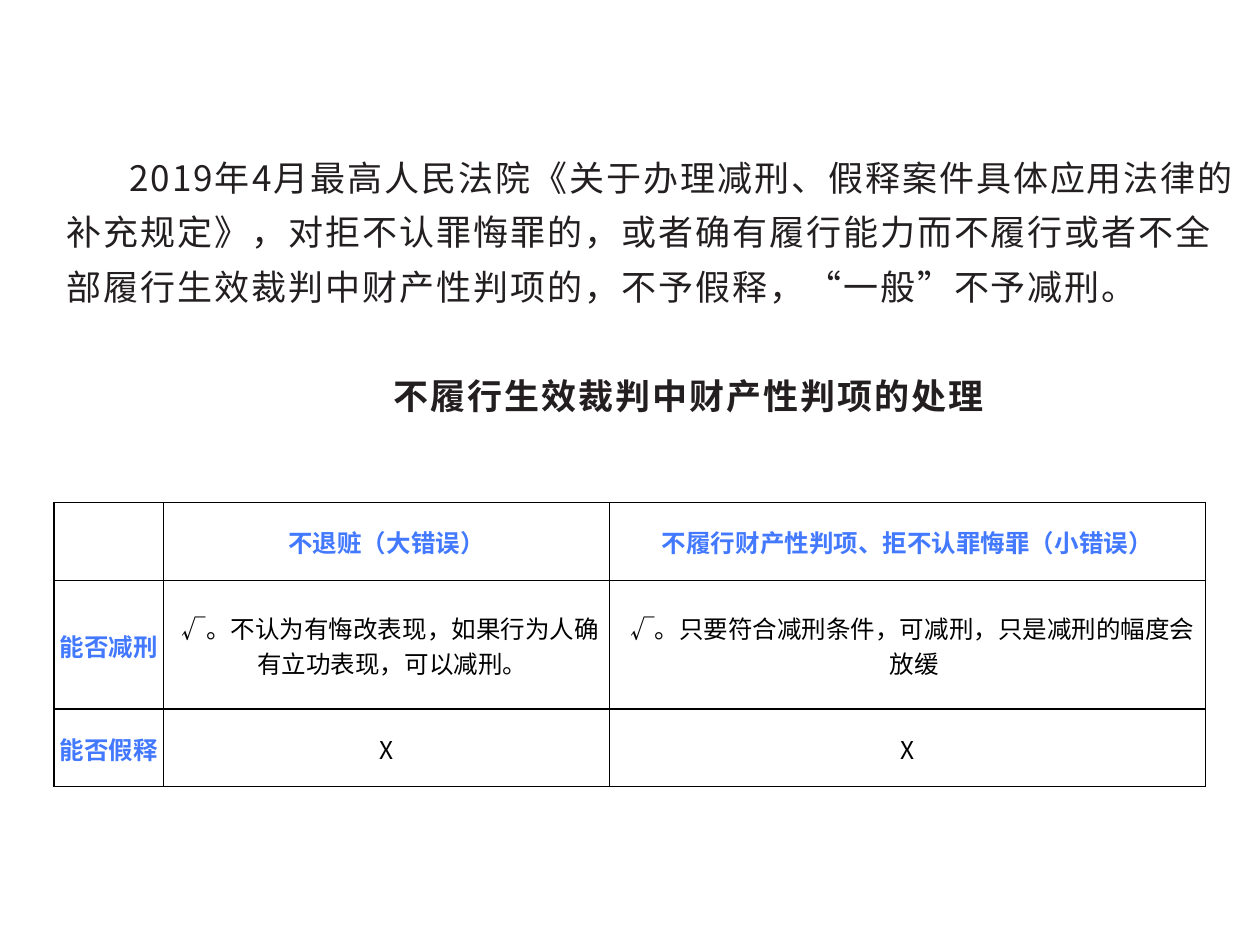
from lxml.etree import SubElement
from pptx import Presentation
from pptx.dml.color import RGBColor
from pptx.enum.text import MSO_ANCHOR as Anchor, PP_ALIGN as Align
from pptx.oxml.ns import qn
from pptx.util import Cm, Pt

COLORS = {"ink": "231F20", "accent": "4379FF", "black": "000000"}
CJK_FONT = "Noto Sans CJK SC"

RULE = ("2019年4月最高人民法院《关于办理减刑、假释案件具体应用法律的补充规定》，"
        "对拒不认罪悔罪的，或者确有履行能力而不履行或者不全部履行生效裁判中财产性判项的，"
        "不予假释，“一般”不予减刑。")
HEADING = "不履行生效裁判中财产性判项的处理"
ROWS = [
    ["", "不退赃（大错误）", "不履行财产性判项、拒不认罪悔罪（小错误）"],
    ["能否减刑", "√。不认为有悔改表现，如果行为人确有立功表现，可以减刑。",
     "√。只要符合减刑条件，可减刑，只是减刑的幅度会放缓"],
    ["能否假释", "X", "X"],
]
COLUMN_WIDTHS = [2.21, 8.99, 12.01]
ROW_HEIGHTS = [1.57, 2.59, 1.57]
# Left margins of the two wrapped answers, by column
ANSWER_MARGINS = {1: 0.23, 2: 0.28}


def style_runs(paragraph, size, color, bold=False, latin=CJK_FONT, spacing=0):
    for run in paragraph.runs:
        run.font.size = Pt(size)
        run.font.bold = bold
        run.font.name = latin
        run.font.color.rgb = RGBColor.from_string(COLORS[color])
        properties = run._r.get_or_add_rPr()
        SubElement(properties, qn("a:ea")).set("typeface", CJK_FONT)
        if spacing:
            properties.set("spc", str(round(spacing * 100)))


def set_indent(paragraph, margin, first_line):
    properties = paragraph._p.get_or_add_pPr()
    properties.set("marL", str(Cm(margin)))
    properties.set("indent", str(Cm(first_line)))


def add_borders(cell):
    properties = cell._tc.get_or_add_tcPr()
    for position, side in enumerate(("lnL", "lnR", "lnT", "lnB")):
        line = properties.makeelement(qn(f"a:{side}"), {"w": str(Pt(1))})
        fill = SubElement(line, qn("a:solidFill"))
        SubElement(fill, qn("a:srgbClr")).set("val", COLORS["black"])
        properties.insert(position, line)


def add_rule_text(slide, left, top, width, height):
    frame = slide.shapes.add_textbox(left, top, width, height).text_frame
    frame.word_wrap = True
    frame.text = f"{RULE}\n{HEADING}"
    rule, heading = frame.paragraphs
    for paragraph in (rule, heading):
        set_indent(paragraph, 0, 1.27)
        paragraph.line_spacing = Pt(31.15)
    style_runs(rule, 20, "ink", spacing=1.1)

    # Heading, one line below the rule
    heading.alignment = Align.CENTER
    heading.space_before = Pt(31.15)
    style_runs(heading, 20, "ink", bold=True, latin="Arial", spacing=1.1)


def add_handling_table(slide, left, top, width, height):
    table = slide.shapes.add_table(len(ROWS), len(COLUMN_WIDTHS),
                                   left, top, width, height).table
    for column, share in zip(table.columns, COLUMN_WIDTHS):
        column.width = int(width * share / sum(COLUMN_WIDTHS))
    for row, share in zip(table.rows, ROW_HEIGHTS):
        row.height = int(height * share / sum(ROW_HEIGHTS))

    for r, texts in enumerate(ROWS):
        for c, text in enumerate(texts):
            cell = table.cell(r, c)
            cell.fill.background()
            add_borders(cell)
            cell.vertical_anchor = Anchor.MIDDLE
            cell.margin_left = cell.margin_right = cell.margin_top = Cm(0.03)
            cell.margin_bottom = 0
            cell.text_frame.text = text
            paragraph = cell.text_frame.paragraphs[0]
            paragraph.alignment = Align.CENTER
            is_label = r == 0 or c == 0
            style_runs(paragraph, 14, "accent" if is_label else "black", bold=is_label)
            if r == 1 and c in ANSWER_MARGINS:
                set_indent(paragraph, ANSWER_MARGINS[c], -0.08)


def main():
    deck = Presentation()
    deck.slide_width, deck.slide_height = Cm(25.4), Cm(19.05)
    slide = deck.slides.add_slide(deck.slide_layouts[6])
    add_rule_text(slide, Cm(1.09), Cm(2.77), Cm(24.31), Cm(15.72))
    add_handling_table(slide, Cm(1.09), Cm(10.13),
                       Cm(sum(COLUMN_WIDTHS)), Cm(sum(ROW_HEIGHTS)))
    deck.save("out.pptx")


if __name__ == "__main__":
    main()
